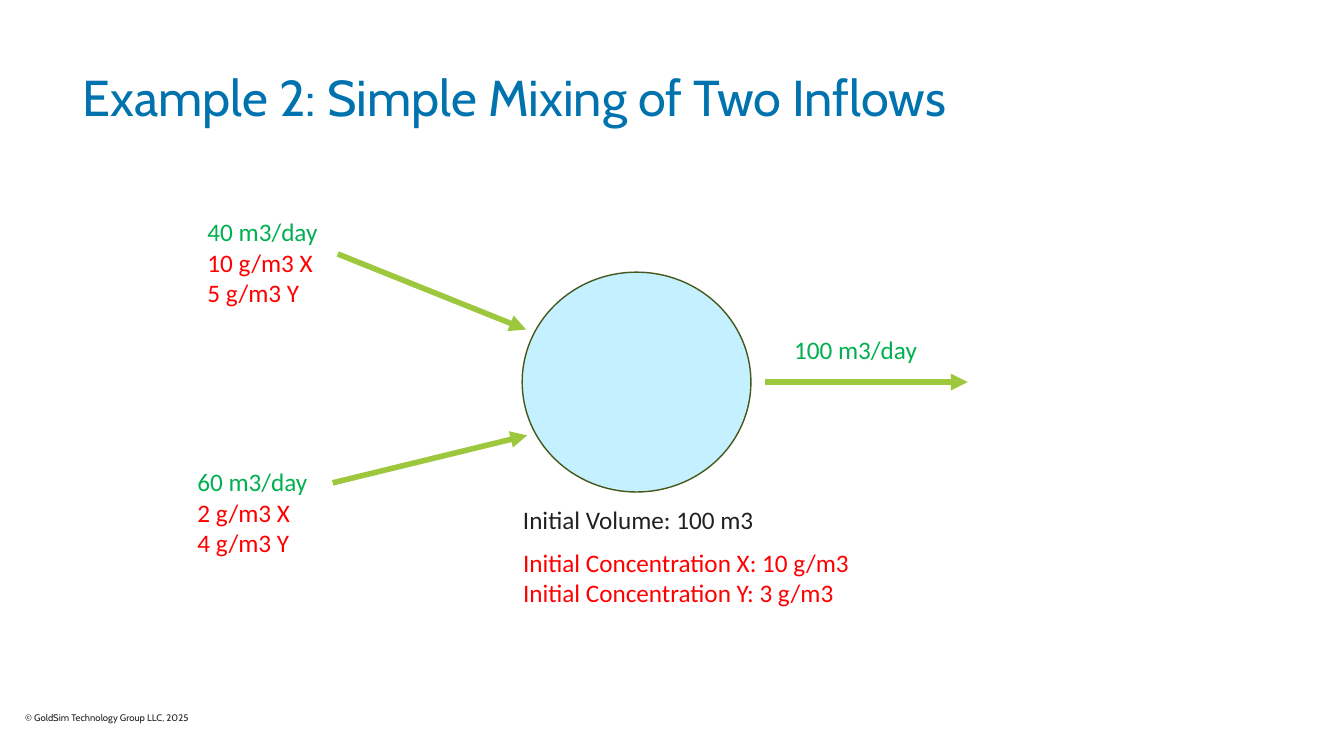
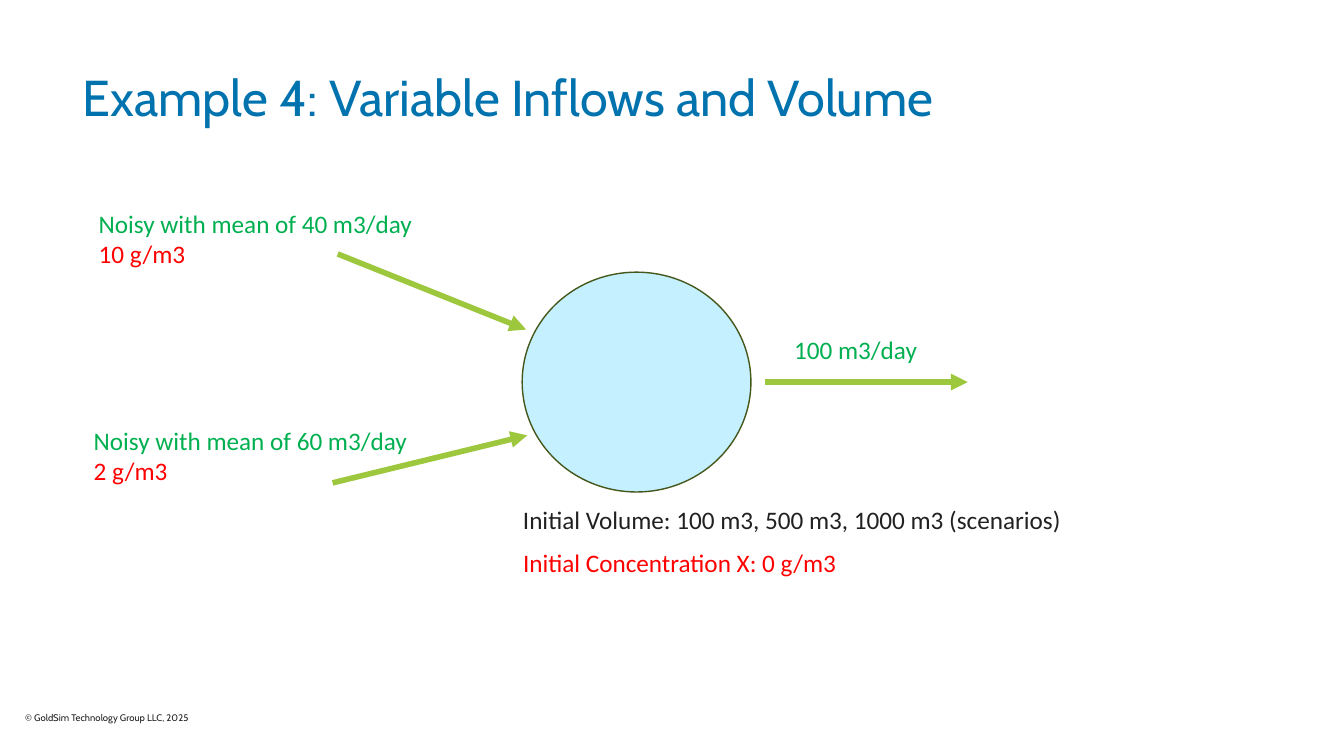
"""Build two slides that show mixing problems in a tank with two inflows."""
from dataclasses import dataclass

from lxml.etree import SubElement
from pptx import Presentation
from pptx.dml.color import RGBColor
from pptx.enum.shapes import MSO_CONNECTOR, MSO_SHAPE
from pptx.enum.text import MSO_ANCHOR
from pptx.oxml.ns import qn
from pptx.slide import Slide
from pptx.util import Pt

COLORS = {
    "title": "0073AF",
    "ink": "212121",
    "flow": "00B050",
    "concentration": "FF0000",
    "arrow": "9DC73C",
    "tank": "C5F0FF",
    "tank_edge": "45571A",
}
HEADING_FONT = "Cabin"
BODY_FONT = "Calibri"
BODY_SIZE = 18
LINE_HEIGHT = 22
INSET_X = 7.2
INSET_Y = 3.6
COPYRIGHT = "© GoldSim Technology Group LLC, 2025"


@dataclass(frozen=True)
class Line:
    text: str
    color: str


@dataclass(frozen=True)
class Label:
    left: float
    top: float
    width: float
    lines: tuple[Line, ...]


@dataclass(frozen=True)
class Arrow:
    start: tuple[float, float]
    end: tuple[float, float]


@dataclass(frozen=True)
class Example:
    title: str
    labels: tuple[Label, ...]


ARROWS = (
    Arrow((241.2, 181.4), (375.8, 235.4)),
    Arrow((237.6, 344.9), (376.6, 311)),
    Arrow((546.5, 272.9), (691.2, 272.9)),
)
OUTFLOW = Label(560.2, 235.4, 105.8, (Line("100 m3/day", "flow"),))


def inflow(left: float, top: float, width: float, rate: str, *concentrations: str) -> Label:
    """Describe an inflow by its rate and its concentrations."""
    contents = tuple(Line(text, "concentration") for text in concentrations)
    return Label(left, top, width, (Line(rate, "flow"), *contents))


def initial_state(width: float, volume: str, *concentrations: str) -> tuple[Label, Label]:
    """Describe the tank's starting volume and concentrations."""
    contents = tuple(Line(f"Initial Concentration {text}", "concentration") for text in concentrations)
    return (
        Label(366.5, 356.4, width, (Line(f"Initial Volume: {volume}", "ink"),)),
        Label(366.5, 387.4, 265, contents),
    )


EXAMPLES = (
    Example(
        "Example 2: Simple Mixing of Two Inflows",
        (
            inflow(141.1, 151.2, 94.3, "40 m3/day", "10 g/m3 X", "5 g/m3 Y"),
            inflow(133.9, 329.8, 94.3, "60 m3/day", "2 g/m3 X", "4 g/m3 Y"),
            *initial_state(188, "100 m3", "X: 10 g/m3", "Y: 3 g/m3"),
        ),
    ),
    Example(
        "Example 4: Variable Inflows and Volume",
        (
            inflow(63.4, 145.4, 241.2, "Noisy with mean of 40 m3/day", "10 g/m3"),
            inflow(59.8, 300.2, 241.2, "Noisy with mean of 60 m3/day", "2 g/m3"),
            *initial_state(427.7, "100 m3, 500 m3, 1000 m3 (scenarios)", "X: 0 g/m3"),
        ),
    ),
)


def rgb(name: str) -> RGBColor:
    """Look up a colour by its role."""
    return RGBColor.from_string(COLORS[name])


def add_text(
    slide: Slide,
    label: Label,
    height: float,
    font: str,
    size: float,
    inset: tuple[float, float] = (0, 0),
    spacing: float = 1.0,
) -> None:
    """Draw the lines of a label, one paragraph each."""
    box = slide.shapes.add_textbox(Pt(label.left), Pt(label.top), Pt(label.width), Pt(height))
    frame = box.text_frame
    frame.word_wrap = True
    frame.margin_left = frame.margin_right = Pt(inset[0])
    frame.margin_top = frame.margin_bottom = Pt(inset[1])
    frame.vertical_anchor = MSO_ANCHOR.TOP if any(inset) else MSO_ANCHOR.MIDDLE
    for index, line in enumerate(label.lines):
        paragraph = frame.add_paragraph() if index else frame.paragraphs[0]
        paragraph.line_spacing = spacing
        run = paragraph.add_run()
        run.text = line.text
        run.font.name = font
        run.font.size = Pt(size)
        run.font.color.rgb = rgb(line.color)


def add_label(slide: Slide, label: Label) -> None:
    """Draw a diagram label as tall as its lines."""
    height = 2 * INSET_Y + LINE_HEIGHT * len(label.lines)
    add_text(slide, label, height, BODY_FONT, BODY_SIZE, (INSET_X, INSET_Y))


def add_frame(slide: Slide, title: str) -> None:
    """Draw the title and the copyright line."""
    heading = Label(59, 52, 759, (Line(title, "title"),))
    add_text(slide, heading, 39, HEADING_FONT, 36, spacing=0.9)
    footer = Label(18, 498.2, 324, (Line(COPYRIGHT, "ink"),))
    add_text(slide, footer, 28.8, HEADING_FONT, 6.8)


def add_tank(slide: Slide) -> None:
    """Draw the mixing tank."""
    tank = slide.shapes.add_shape(
        MSO_SHAPE.FLOWCHART_CONNECTOR, Pt(373), Pt(194.4), Pt(163.4), Pt(157)
    )
    tank.shadow.inherit = False
    tank.fill.solid()
    tank.fill.fore_color.rgb = rgb("tank")
    tank.line.color.rgb = rgb("tank_edge")
    tank.line.width = Pt(1)


def add_arrow(slide: Slide, arrow: Arrow) -> None:
    """Draw a flow arrow with a triangular head."""
    flow = slide.shapes.add_connector(
        MSO_CONNECTOR.STRAIGHT, *map(Pt, arrow.start), *map(Pt, arrow.end)
    )
    flow.line.color.rgb = rgb("arrow")
    flow.line.width = Pt(4)
    properties = flow.line._get_or_add_ln()
    SubElement(properties, qn("a:tailEnd"), type="triangle")
    SubElement(properties.getparent(), qn("a:effectLst"))


def main() -> None:
    """Build and save the presentation."""
    deck = Presentation()
    deck.slide_width, deck.slide_height = Pt(960), Pt(540)
    for example in EXAMPLES:
        slide = deck.slides.add_slide(deck.slide_layouts[6])
        add_frame(slide, example.title)
        add_tank(slide)
        for arrow in ARROWS:
            add_arrow(slide, arrow)
        for label in (*example.labels, OUTFLOW):
            add_label(slide, label)
    deck.save("out.pptx")


if __name__ == "__main__":
    main()
